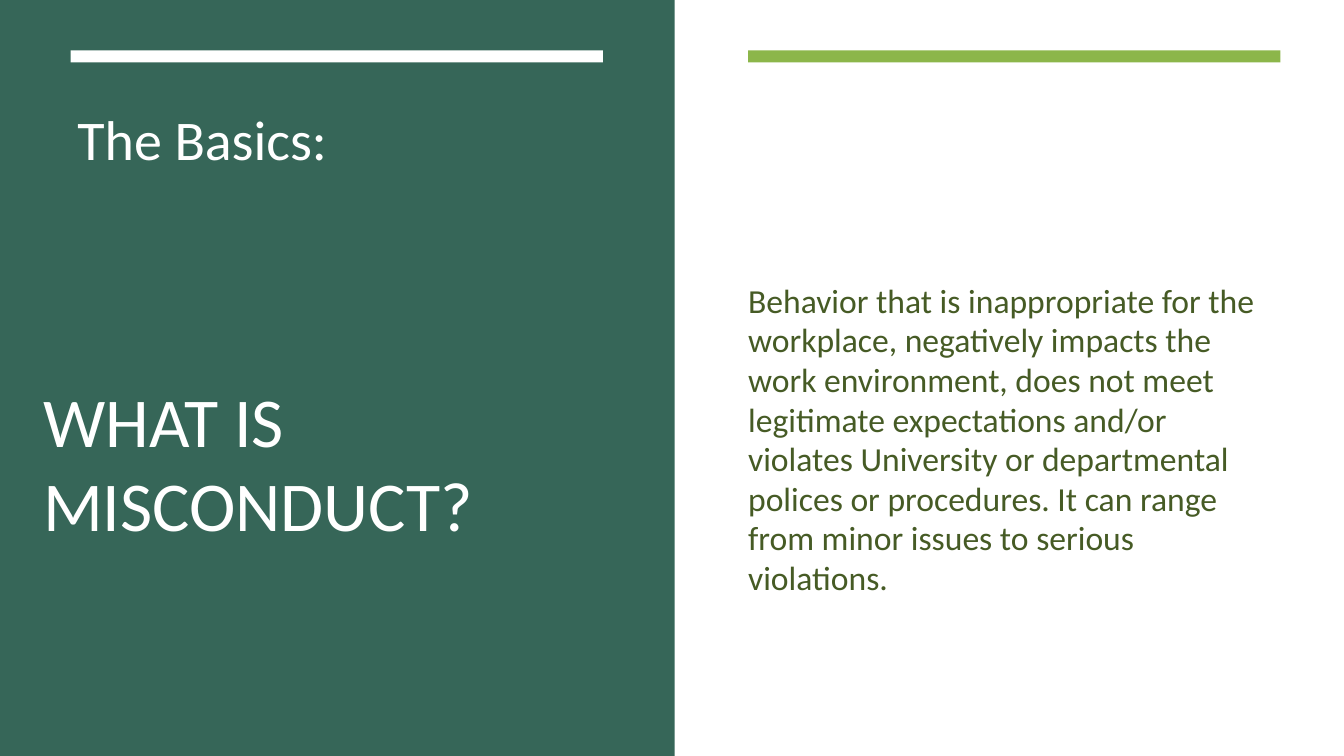
from pptx import Presentation
from pptx import util as u
from pptx.dml.color import RGBColor
from pptx.enum import shapes, text

THEME = {
    "font": "Calibri",
    "white": RGBColor.from_string("FFFFFF"),
    "panel": RGBColor.from_string("366658"),
    "accent": RGBColor.from_string("8CB64A"),
    "body": RGBColor.from_string("465B25"),
    "title_size": 50,
    "heading_size": 40,
    "body_size": 24,
}

presentation = Presentation()
presentation.slide_width = u.Inches(13.33)
presentation.slide_height = u.Inches(7.5)
slide = presentation.slides.add_slide(presentation.slide_layouts[6])

# Two halves, each headed by a bar of the same size
panel_width = 6.69
bar_top, bar_width, bar_height = 0.5, 5.28, 0.12
rectangles = [
    ((0, 0, 13.33, 7.5), "white"),
    ((0, 0, panel_width, 7.5), "panel"),
    ((0.7, bar_top, bar_width, bar_height), "white"),
    ((7.42, bar_top, bar_width, bar_height), "accent"),
]
for box, color in rectangles:
    shape = slide.shapes.add_shape(
        shapes.MSO_SHAPE.RECTANGLE, *(u.Inches(length) for length in box))
    shape.shadow.inherit = False
    shape.fill.solid()
    shape.fill.fore_color.rgb = THEME[color]
    shape.line.fill.background()

# Box, insets (left, top, right, bottom), wording, type size, colour, line spacing
texts = [
    ((7.35, 1.92, 5.31, 5.28), (0.07, 0.05, 0.1, 0.44),
     "Behavior that is inappropriate for the workplace, negatively impacts the "
     "work environment, does not meet legitimate expectations and/or violates "
     "University or departmental polices or procedures. It can range from minor "
     "issues to serious violations.", "body_size", "body", 0.98),
    ((0.33, 2.7, 5.58, 3.71), (0.1, 0.1, 0.1, 0.05),
     "WHAT IS MISCONDUCT?", "title_size", "white", 1.0),
    ((0.67, 0.73, 2.91, 1.23), (0.1, 0.1, 0.1, 0.05),
     "The Basics:", "heading_size", "white", 1.0),
]
for box, insets, wording, size, color, line_spacing in texts:
    shape = slide.shapes.add_textbox(*(u.Inches(length) for length in box))
    frame = shape.text_frame
    frame.word_wrap = True
    frame.vertical_anchor = text.MSO_ANCHOR.MIDDLE
    for side, inset in zip(("left", "top", "right", "bottom"), insets):
        setattr(frame, f"margin_{side}", u.Inches(inset))
    paragraph = frame.paragraphs[0]
    paragraph.line_spacing = line_spacing
    run = paragraph.add_run()
    run.text = wording
    for name, value in {"name": THEME["font"], "size": u.Pt(THEME[size])}.items():
        setattr(run.font, name, value)
    run.font.color.rgb = THEME[color]

presentation.save("out.pptx")
